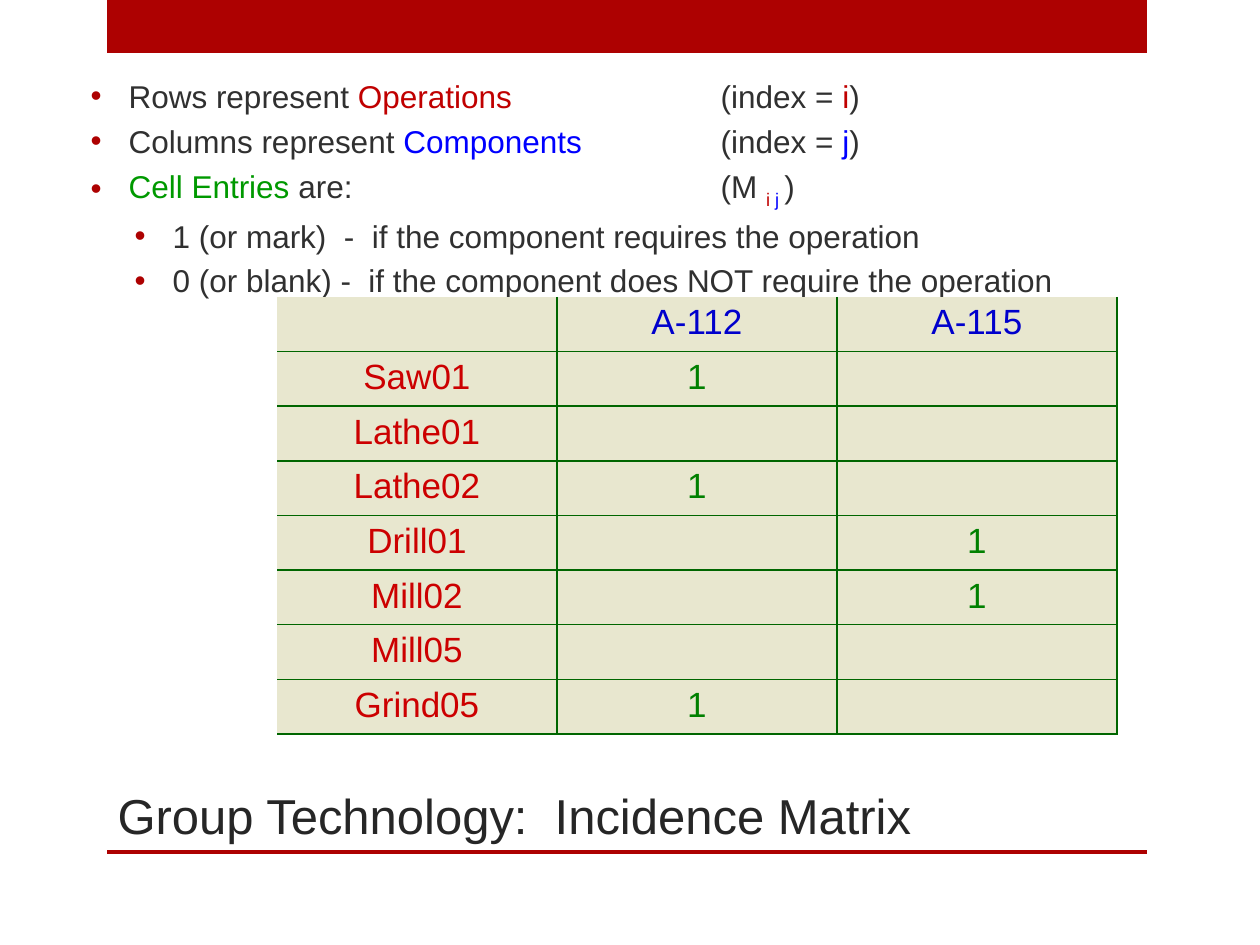
"""Build the incidence matrix slide for group technology."""
import pptx
import pptx.dml.color
import pptx.enum.shapes
import pptx.enum.text
import pptx.oxml
import pptx.oxml.ns
import pptx.util
from lxml import etree

SCALE = 914400 / 126
FONT = "Arial"
INK = {
    "bar": "AD0101", "title": "262626", "text": "303030", "row": "C00000",
    "col": "0000FF", "entry": "009900", "cell": "E8E7CF", "grid": "006600",
    "part": "0000CC", "tool": "CC0000", "mark": "008000",
}
LINES = [
    (0, [("Rows represent ", "text"), ("Operations \t\t", "row"),
         ("(index = ", "text"), ("i", "row"), (")", "text")]),
    (0, [("Columns represent ", "text"), ("Components \t", "col"),
         ("\t(index = ", "text"), ("j", "col"), (")", "text")]),
    (0, [("Cell Entries ", "entry"), ("are:\t\t\t(M ", "text"),
         ("i ", "row", -25), ("j ", "col", -25), (")", "text")]),
    (1, [("1 (or mark)  -  if the component requires the operation", "text")]),
    (1, [("0 (or blank) -  if the component does NOT require the operation", "text")]),
]
MATRIX = [
    ("", "A-112", "A-115"),
    ("Saw01", "1", ""),
    ("Lathe01", "", ""),
    ("Lathe02", "1", ""),
    ("Drill01", "", "1"),
    ("Mill02", "", "1"),
    ("Mill05", "", ""),
    ("Grind05", "1", ""),
]


def px(num):
    return pptx.util.Emu(round(num * SCALE))


def rgb(name):
    return pptx.dml.color.RGBColor.from_string(INK[name])


def node(root, tag, **attrs):
    item = etree.SubElement(root, pptx.oxml.ns.qn("a:" + tag))
    for key, value in attrs.items():
        item.set(key, str(value))
    return item


def write(para, text, size=18, color="text", base=0):
    run = para.add_run()
    run.text = text
    run.font.name = FONT
    run.font.size = pptx.util.Pt(size)
    run.font.color.rgb = rgb(color)
    if base:
        run.font._element.set("baseline", str(base * 1000))


class Deck:
    """Hold the style and the current slide."""

    def __init__(self):
        self.show = pptx.Presentation()
        self.show.slide_width, self.show.slide_height = px(1260), px(945)
        self.slide = self.show.slides.add_slide(self.show.slide_layouts[1])

    def bar(self, left, top, width, height):
        shape = self.slide.shapes.add_shape(
            pptx.enum.shapes.MSO_SHAPE.RECTANGLE,
            px(left), px(top), px(width), px(height))
        shape.shadow.inherit = False
        shape.fill.solid()
        shape.fill.fore_color.rgb = rgb("bar")
        shape.line.fill.background()

    def place(self, shape, box, anchor):
        shape.left, shape.top, shape.width, shape.height = map(px, box)
        frame = shape.text_frame
        frame.word_wrap = True
        frame.auto_size = pptx.enum.text.MSO_AUTO_SIZE.NONE
        frame.vertical_anchor = anchor
        return frame

    def title(self, text, *box):
        frame = self.place(self.slide.shapes.title, box,
                           pptx.enum.text.MSO_ANCHOR.BOTTOM)
        para = frame.paragraphs[0]
        para.alignment = pptx.enum.text.PP_ALIGN.LEFT
        write(para, text, size=28, color="title")

    def bullets(self, lines, *box):
        frame = self.place(self.slide.placeholders[1], box,
                           pptx.enum.text.MSO_ANCHOR.TOP)
        frame.margin_top = px(10)
        for num, (level, parts) in enumerate(lines):
            para = frame.add_paragraph() if num else frame.paragraphs[0]
            para.level = level
            para.space_before = pptx.util.Pt(4 if num else 0)
            props = para._p.get_or_add_pPr()
            props.set("marL", str(px(38 + 44 * level)))
            props.set("indent", str(px(-38)))
            props.set("defTabSz", str(px(126)))
            node(node(props, "buClr"), "srgbClr", val=INK["bar"])
            node(props, "buFont", typeface=FONT)
            node(props, "buChar", char="•")
            for text, color, *base in parts:
                write(para, text, color=color, base=base[0] if base else 0)

    def border(self, cell, row, col):
        props = cell._tc.get_or_add_tcPr()
        shown = {"lnL": col > 0, "lnR": True, "lnT": row > 0, "lnB": True}
        for spot, (tag, drawn) in enumerate(shown.items()):
            line = node(props, tag, w=pptx.util.Pt(1))
            if drawn:
                node(node(line, "solidFill"), "srgbClr", val=INK["grid"])
            else:
                node(line, "noFill")
            props.insert(spot, line)

    def table(self, rows, *box):
        grid = self.slide.shapes.add_table(
            len(rows), len(rows[0]), *map(px, box)).table
        for row, texts in enumerate(rows):
            for col, text in enumerate(texts):
                cell = grid.cell(row, col)
                cell.fill.solid()
                cell.fill.fore_color.rgb = rgb("cell")
                self.border(cell, row, col)
                if text:
                    color = "part" if row == 0 else "mark" if col else "tool"
                    para = cell.text_frame.paragraphs[0]
                    para.alignment = pptx.enum.text.PP_ALIGN.CENTER
                    write(para, text, size=20, color=color)


def main():
    deck = Deck()
    deck.bar(107, 0, 1040, 53)
    deck.bar(107, 850, 1040, 4)
    deck.title("Group Technology:  Incidence Matrix", 105, 746, 1041, 105)
    deck.bullets(LINES, 78, 67, 1092, 273)
    deck.table(MATRIX, 277, 297, 840, 437)
    deck.show.save("out.pptx")


if __name__ == "__main__":
    main()
